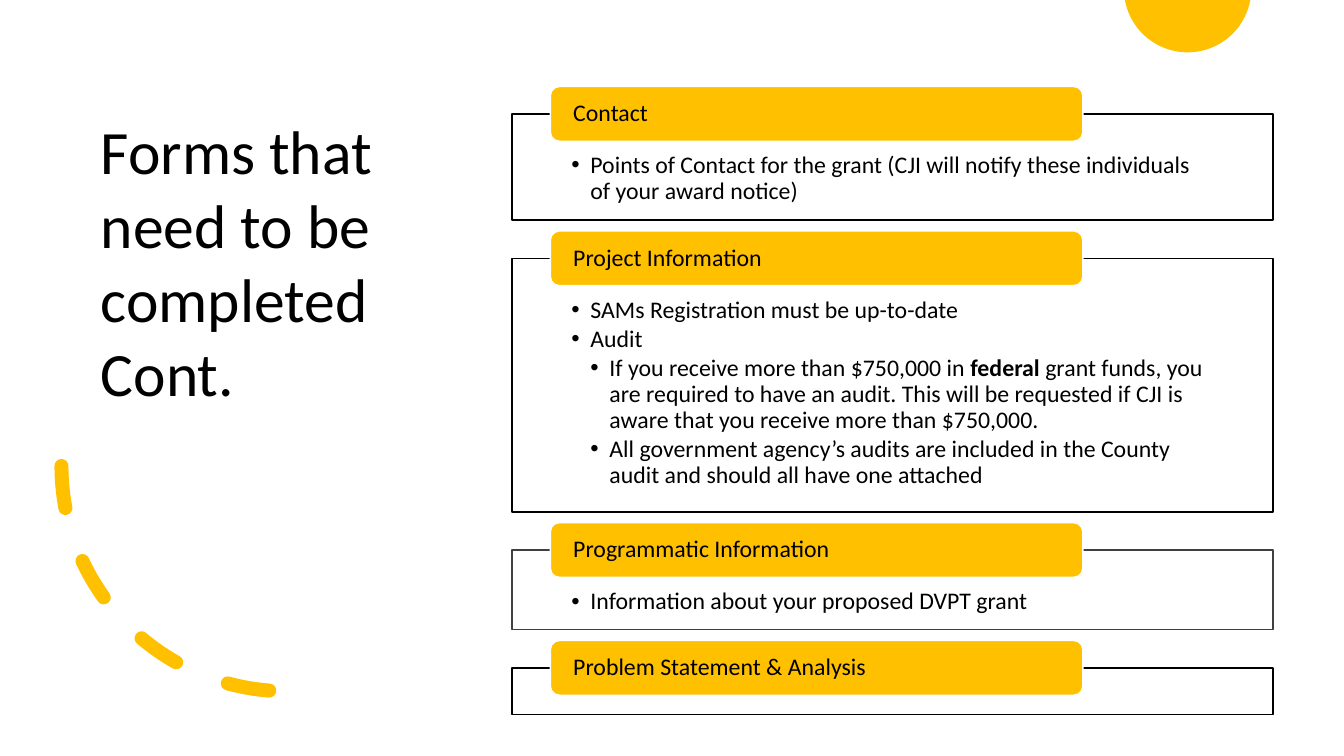
import math

from lxml import etree
from pptx import Presentation
from pptx.dml.color import RGBColor
from pptx.enum import dml, shapes, text
from pptx.oxml import ns
from pptx.util import Cm, Pt

# Content: heading, frame height in cm, frame line, bullets as (level, runs of (words, bold))
TITLE = "Forms that need to be completed Cont."
SECTIONS = [
    ("Contact", 2.68, "black", [
        (1, [("Points of Contact for the grant (CJI will notify these individuals "
              "of your award notice)", False)]),
    ]),
    ("Project Information", 6.39, "black", [
        (1, [("SAMs Registration must be up-to-date", False)]),
        (1, [("Audit", False)]),
        (2, [("If you receive more than $750,000 in ", False),
             ("federal", True),
             (" grant funds, you are required to have an audit. This will be requested "
              "if CJI is aware that you receive more than $750,000.", False)]),
        (2, [("All government agency’s audits are included in the County audit "
              "and should all have one attached", False)]),
    ]),
    ("Programmatic Information", 2.01, "gray", [
        (1, [("Information about your proposed DVPT grant", False)]),
    ]),
    ("Problem Statement & Analysis", 1.18, "black", []),
]
COLORS = {"gold": "FFC000", "black": "000000", "gray": "404040", "white": "FFFFFF"}
FONT = "Calibri"

# Layout in cm
FRAME_LEFT, FRAME_TOP, FRAME_WIDTH, FRAME_GAP = 12.9, 2.87, 19.18, 0.96
TAB_LEFT, TAB_RISE, TAB_WIDTH, TAB_HEIGHT = 13.87, 0.69, 13.42, 1.38
BULLET_INDENT = 0.48
CAP_CENTER, CAP_HALF_WIDTH, CAP_DEPTH = 29.93, 1.58, 1.32


def color(name):
    return RGBColor.from_string(COLORS[name])


def paint(shape, fill, line, width=1):
    shape.shadow.inherit = False
    if fill:
        shape.fill.solid()
        shape.fill.fore_color.rgb = color(fill)
    else:
        shape.fill.background()
    if line:
        shape.line.color.rgb = color(line)
        shape.line.width = Pt(width)
    else:
        shape.line.fill.background()


def set_frame(shape, anchor, left, top, right, bottom):
    values = {"word_wrap": True, "vertical_anchor": anchor,
              "auto_size": text.MSO_AUTO_SIZE.NONE,
              "margin_left": Cm(left), "margin_top": Cm(top),
              "margin_right": Cm(right), "margin_bottom": Cm(bottom)}
    for name, value in values.items():
        setattr(shape.text_frame, name, value)
    return shape.text_frame


def write(para, runs, size, spacing, after=0):
    values = {"alignment": text.PP_ALIGN.LEFT, "line_spacing": spacing,
              "space_before": Pt(0), "space_after": Pt(after)}
    for name, value in values.items():
        setattr(para, name, value)
    for words, bold in runs:
        span = para.add_run()
        span.text = words
        span.font.color.rgb = color("black")
        for name, value in {"name": FONT, "size": Pt(size), "bold": bold}.items():
            setattr(span.font, name, value)


def add_bullet(para, level):
    para.level = level
    props = para._p.get_or_add_pPr()
    props.set("marL", str(Cm(BULLET_INDENT * level)))
    props.set("indent", str(-Cm(BULLET_INDENT)))
    etree.SubElement(props, ns.qn("a:buFont"), typeface="Arial")
    etree.SubElement(props, ns.qn("a:buChar"), char="•")


deck = Presentation()
deck.slide_width, deck.slide_height = Cm(33.87), Cm(19.05)
page = deck.slides.add_slide(deck.slide_layouts[5])

# Circle segment at the top edge
radius = (CAP_HALF_WIDTH ** 2 + CAP_DEPTH ** 2) / (2 * CAP_DEPTH)
half_angle = math.asin(CAP_HALF_WIDTH / radius)
steps = 60
points = []
for step in range(steps + 1):
    angle = half_angle * (1 - 2 * step / steps)
    points.append((Cm(CAP_CENTER + radius * math.sin(angle)),
                   Cm(CAP_DEPTH - radius + radius * math.cos(angle))))
builder = page.shapes.build_freeform(*points[0], scale=1.0)
builder.add_line_segments(points[1:], close=True)
paint(builder.convert_to_shape(), "gold", None)

# Dashed arc at the lower left
arc = page.shapes.add_shape(shapes.MSO_SHAPE.ARC, Cm(1.55), Cm(6.07), Cm(11.35), Cm(11.35))
paint(arc, None, "gold", 10)
arc.rotation = 90
arc.line.dash_style = dml.MSO_LINE.DASH
arc._element.spPr.xfrm.set("flipV", "1")
arc.line._get_or_add_ln().set("cap", "rnd")

# Title
title = page.shapes.title
title.left, title.top, title.width, title.height = Cm(2.29), Cm(2.72), Cm(9.86), Cm(7.77)
title_frame = set_frame(title, text.MSO_ANCHOR.TOP, 0.25, 0.13, 0.25, 0.13)
write(title_frame.paragraphs[0], [(TITLE, False)], 44, 1.0)

# Framed sections with heading tabs
top = FRAME_TOP
for heading, height, line, bullets in SECTIONS:
    box = page.shapes.add_shape(shapes.MSO_SHAPE.RECTANGLE, Cm(FRAME_LEFT), Cm(top),
                                Cm(FRAME_WIDTH), Cm(height))
    paint(box, "white", line)
    body = set_frame(box, text.MSO_ANCHOR.TOP, 1.5, 0.99, 1.5, 0.33)
    for index, (level, runs) in enumerate(bullets):
        para = body.add_paragraph() if index else body.paragraphs[0]
        write(para, runs, 17, 0.9, after=2.55)
        add_bullet(para, level)

    tab = page.shapes.add_shape(shapes.MSO_SHAPE.ROUNDED_RECTANGLE, Cm(TAB_LEFT),
                                Cm(top - TAB_RISE), Cm(TAB_WIDTH), Cm(TAB_HEIGHT))
    paint(tab, "gold", "white")
    label = set_frame(tab, text.MSO_ANCHOR.MIDDLE, 0.51, 0, 0.51, 0)
    write(label.paragraphs[0], [(heading, False)], 17, 0.9)
    top += height + FRAME_GAP

deck.save("out.pptx")
